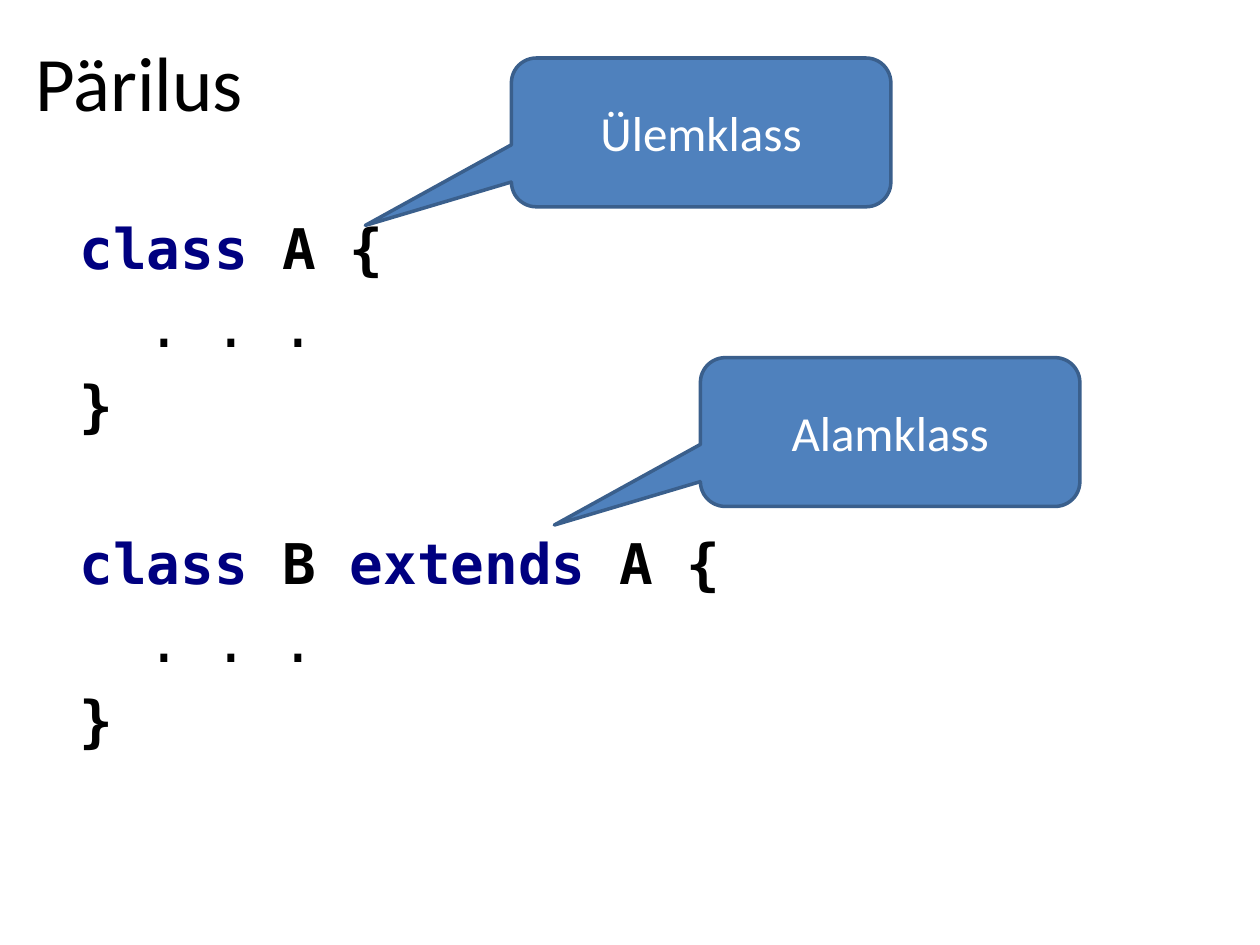
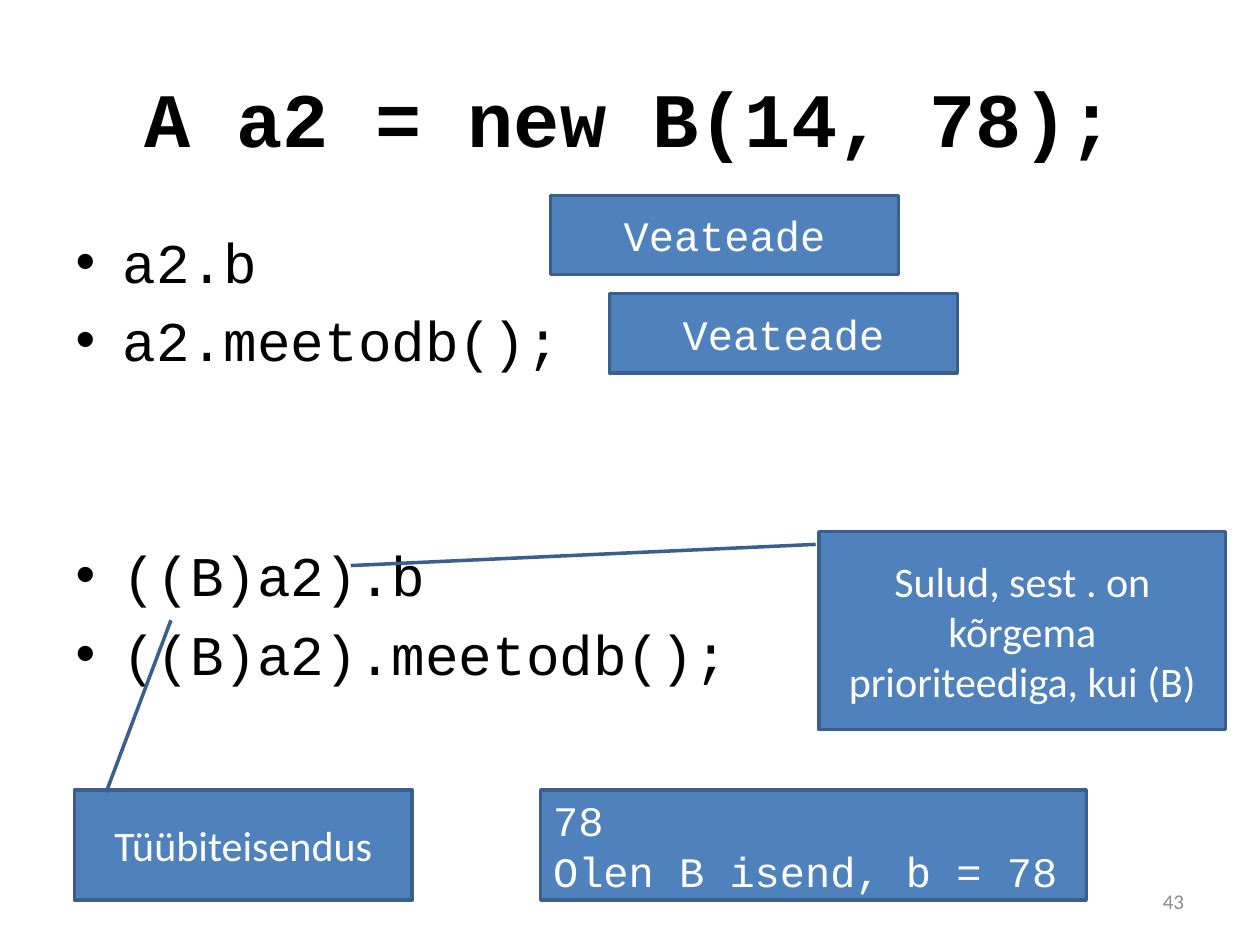
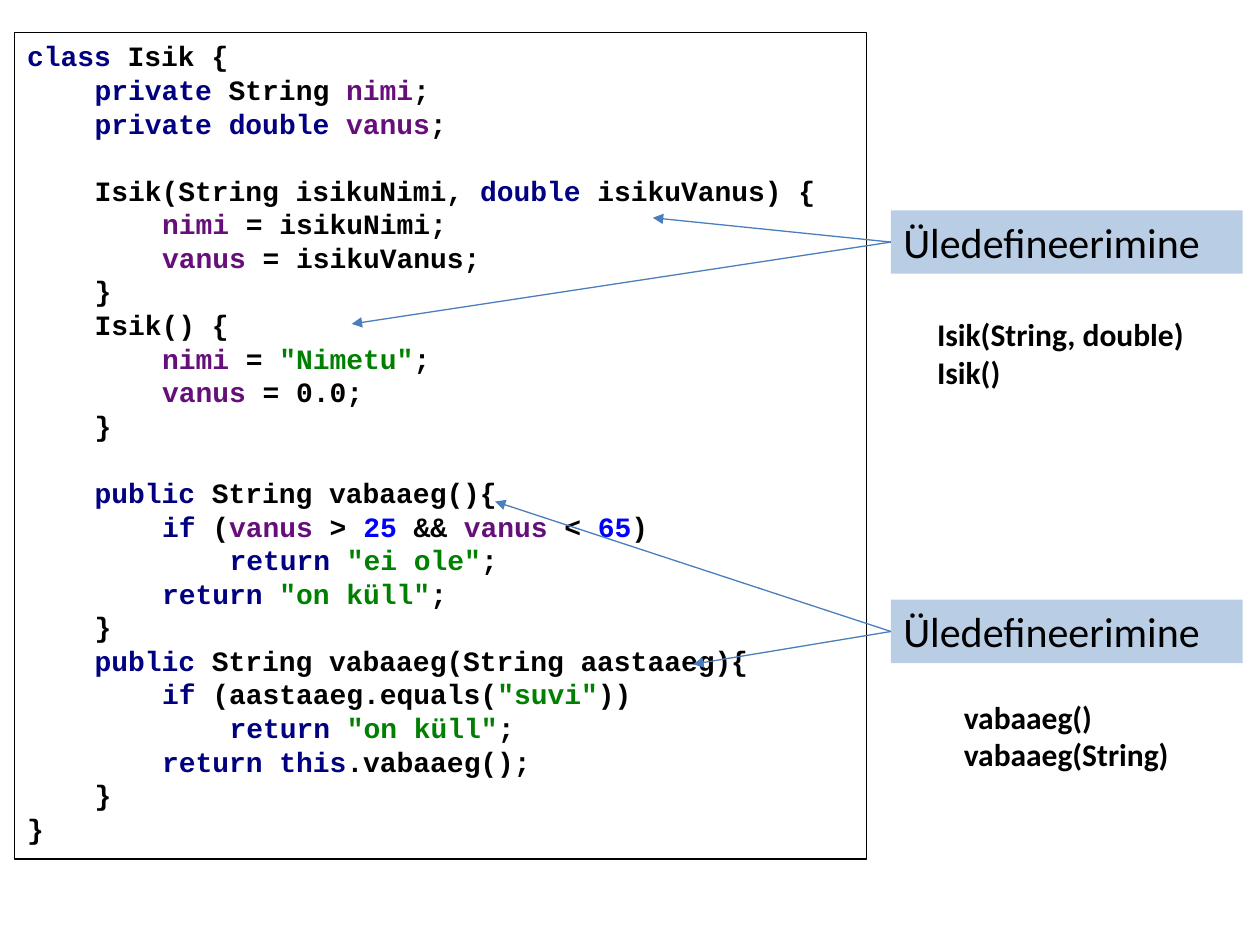
"""Build three slides on inheritance and overloading."""
from itertools import groupby

from lxml import etree
from pptx import Presentation
from pptx.dml.color import RGBColor
from pptx.enum.shapes import MSO_CONNECTOR, MSO_SHAPE
from pptx.enum.text import MSO_ANCHOR, MSO_AUTO_SIZE, PP_ALIGN
from pptx.oxml.ns import qn
from pptx.util import Cm, Pt

LEFT, MID, RIGHT = PP_ALIGN.LEFT, PP_ALIGN.CENTER, PP_ALIGN.RIGHT
TOP, CENTER = MSO_ANCHOR.TOP, MSO_ANCHOR.MIDDLE
RECT = MSO_SHAPE.RECTANGLE
BUBBLE = MSO_SHAPE.ROUNDED_RECTANGULAR_CALLOUT
CALLOUT = MSO_SHAPE.LINE_CALLOUT_1
STRAIGHT = MSO_CONNECTOR.STRAIGHT


class Theme:
    """Colours, fonts and type sizes."""
    black, white, grey = "000000", "FFFFFF", "8C8C8C"
    blue, edge, pale, arrow = "4F81BD", "3A5F8C", "B9CDE5", "4B7EBC"
    word, field, string, number = "000080", "660E7A", "008000", "0000FF"
    sans, mono, code = "Calibri", "Courier New", "DejaVu Sans Mono"
    title, body, bubble, box, note, small, page = 44, 32, 28, 24, 18, 16, 12
    tab = Cm(1.36)


WORDS = {"class", "extends", "private", "public", "double", "if", "return", "this"}
FIELDS = {"nimi", "vanus"}

PAIR = [
    [(0, "class A {"), (1, ". . ."), (0, "}")],
    [(0, "class B extends A {"), (1, ". . ."), (0, "}")],
]
BUBBLES = [("Ülemklass", 10.31, 1.17), ("Alamklass", 14.12, 7.21)]

CALLS = [["a2.b", "a2.meetodb();"], ["((B)a2).b", "((B)a2).meetodb();"]]
ERRORS = [(12.29, 5.92), (11.1, 3.94)]
HINTS = [
    ("Tüübiteisendus", (1.5, 15.93, 6.81, 2.21), (-1.551, 0.286, 0.02, 0.094)),
    ("Sulud, sest . on kõrgema prioriteediga, kui (B)",
     (16.51, 10.72, 8.2, 3.99), (0.171, -1.151, 0.064, -0.008)),
]

PERSON = [
    [(0, "class Isik {"),
     (1, "private String nimi;"),
     (1, "private double vanus;")],
    [(1, "Isik(String isikuNimi, double isikuVanus) {"),
     (2, "nimi = isikuNimi;"),
     (2, "vanus = isikuVanus;"),
     (1, "}"),
     (1, "Isik() {"),
     (2, 'nimi = "Nimetu";'),
     (2, "vanus = 0.0;"),
     (1, "}")],
    [(1, "public String vabaaeg(){"),
     (2, "if (vanus > 25 && vanus < 65)"),
     (3, 'return "ei ole";'),
     (2, 'return "on küll";'),
     (1, "}"),
     (1, "public String vabaaeg(String aastaaeg){"),
     (2, 'if (aastaaeg.equals("suvi"))'),
     (3, 'return "on küll";'),
     (2, "return this.vabaaeg();"),
     (1, "}"),
     (0, "}")],
]
LABELS = [(4.24, [(13.16, 4.39), (7.09, 6.53)]),
          (12.09, [(9.98, 10.11), (13.97, 13.39)])]
NOTES = [("vabaaeg()\nvabaaeg(String)", (19.18, 13.94, 4.67, 1.8)),
         ("Isik(String, double)\nIsik()", (18.64, 6.22, 5.74, 1.8))]


def rgb(tint):
    return RGBColor.from_string(tint)


def style(run, font, size, tint, bold=False):
    run.font.name, run.font.size, run.font.bold = font, Pt(size), bold
    run.font.color.rgb = rgb(tint)


def write(shape, text, font, size, tint, align, bold=False):
    frame = shape.text_frame
    frame.text, frame.word_wrap = text, True
    for para in frame.paragraphs:
        para.alignment = align
        for run in para.runs:
            style(run, font, size, tint, bold)


def place(shape, box):
    shape.left, shape.top, shape.width, shape.height = map(Cm, box)
    shape.text_frame.auto_size = MSO_AUTO_SIZE.NONE
    return shape


def rows(frame, blocks, gap):
    """Yield a paragraph for each item, with a gap before each later block."""
    para = None
    for block in blocks:
        for rank, item in enumerate(block):
            later = para is not None
            para = frame.add_paragraph() if later else frame.paragraphs[0]
            if later and rank == 0:
                para.space_before = Pt(gap)
            yield para, item


def kind(char):
    return "word" if char.isalpha() else "number" if char in "0123456789." else "sign"


def tint_of(token):
    if token in WORDS:
        return Theme.word
    if token in FIELDS:
        return Theme.field
    return Theme.number if token.strip(".").isdigit() else Theme.black


def scan(line):
    """Split a line of code into tokens with their colours."""
    for rank, part in enumerate(line.split('"')):
        if rank % 2:
            yield f'"{part}"', Theme.string
        else:
            for _, chars in groupby(part, kind):
                token = "".join(chars)
                yield token, tint_of(token)


def list_code(frame, blocks, font, size, gap):
    for para, (level, line) in rows(frame, blocks, gap):
        para.alignment = LEFT
        props = para._p.get_or_add_pPr()
        props.set("marL", str(level * Theme.tab))
        props.set("indent", "0")
        etree.SubElement(props, qn("a:buNone"))
        for tint, group in groupby(scan(line), lambda pair: pair[1]):
            run = para.add_run()
            run.text = "".join(token for token, _ in group)
            style(run, font, size, tint, not line.startswith("."))


def add_box(slide, form, box, fill=Theme.blue, edge=Theme.edge, wide=2, anchor=CENTER):
    shape = slide.shapes.add_shape(form, *map(Cm, box))
    shape.shadow.inherit = False
    for paint, tint in ((shape.fill, fill), (shape.line.fill, edge)):
        if tint:
            paint.solid()
            paint.fore_color.rgb = rgb(tint)
        else:
            paint.background()
    if edge:
        shape.line.width = Pt(wide)
    shape.text_frame.vertical_anchor = anchor
    return shape


def bend(shape, values):
    for rank, value in enumerate(values):
        shape.adjustments[rank] = value


def add_arrow(slide, label, tip):
    line = slide.shapes.add_connector(STRAIGHT, 0, 0, *map(Cm, tip))
    line.begin_connect(label, 1)
    line.line.color.rgb, line.line.width = rgb(Theme.arrow), Pt(0.75)
    etree.SubElement(line.line._get_or_add_ln(), qn("a:tailEnd"), type="triangle")
    etree.SubElement(line._element.spPr, qn("a:effectLst"))


def add_text(slide, box, *look, anchor=TOP, **more):
    shape = slide.shapes.add_textbox(*map(Cm, box))
    write(shape, *look, **more)
    shape.text_frame.vertical_anchor = anchor


def show_pair(deck):
    slide = deck.slides.add_slide(deck.slide_layouts[1])
    title = place(slide.shapes.title, (0.46, 0.48, 21.89, 2.29))
    write(title, "Pärilus", Theme.sans, Theme.title, Theme.black, LEFT)
    body = place(slide.placeholders[1], (1.35, 4.17, 21.89, 12.09))
    list_code(body.text_frame, PAIR, Theme.code, Theme.body, 52)
    for text, left, top in BUBBLES:
        shape = add_box(slide, BUBBLE, (left, top, 7.65, 3))
        bend(shape, (-0.885, 0.625, 0.167))
        write(shape, text, Theme.sans, Theme.bubble, Theme.white, MID)


def show_cast(deck):
    slide = deck.slides.add_slide(deck.slide_layouts[1])
    title = place(slide.shapes.title, (1.27, 0.76, 22.86, 3.18))
    write(title, "A a2 = new B(14, 78);", Theme.mono, Theme.title, Theme.black, MID, True)
    body = place(slide.placeholders[1], (1.27, 4.45, 22.86, 12.57))
    for para, line in rows(body.text_frame, CALLS, 96):
        para.text = line
        style(para.runs[0], Theme.mono, Theme.body, Theme.black)
    add_text(slide, (18.2, 17.65, 5.92, 1.02), "43", Theme.sans, Theme.page,
             Theme.grey, RIGHT, anchor=CENTER)
    for spot in ERRORS:
        shape = add_box(slide, RECT, (*spot, 7.01, 1.6))
        write(shape, "Veateade", Theme.mono, Theme.box, Theme.white, MID)
    for text, box, bends in HINTS:
        shape = add_box(slide, CALLOUT, box)
        bend(shape, bends)
        write(shape, text, Theme.sans, Theme.box, Theme.white, MID)
    shape = add_box(slide, RECT, (10.9, 15.93, 11, 2.21))
    write(shape, "78\nOlen B isend, b = 78", Theme.mono, Theme.box, Theme.white, LEFT)


def show_person(deck):
    slide = deck.slides.add_slide(deck.slide_layouts[6])
    code = add_box(slide, RECT, (0.3, 0.66, 17.17, 16.66), None, Theme.black, 0.75, TOP)
    list_code(code.text_frame, PERSON, Theme.mono, Theme.small, 19.2)
    for top, tips in LABELS:
        label = add_box(slide, RECT, (17.96, top, 7.09, 1.28), Theme.pale, None, anchor=TOP)
        write(label, "Üledefineerimine", Theme.sans, Theme.box, Theme.black, LEFT)
        for tip in tips:
            add_arrow(slide, label, tip)
    for text, box in NOTES:
        add_text(slide, box, text, Theme.sans, Theme.note, Theme.black, LEFT, bold=True)


def main():
    deck = Presentation()
    deck.slide_width, deck.slide_height = Cm(25.4), Cm(19.05)
    for show in (show_pair, show_cast, show_person):
        show(deck)
    deck.save("out.pptx")


if __name__ == "__main__":
    main()
